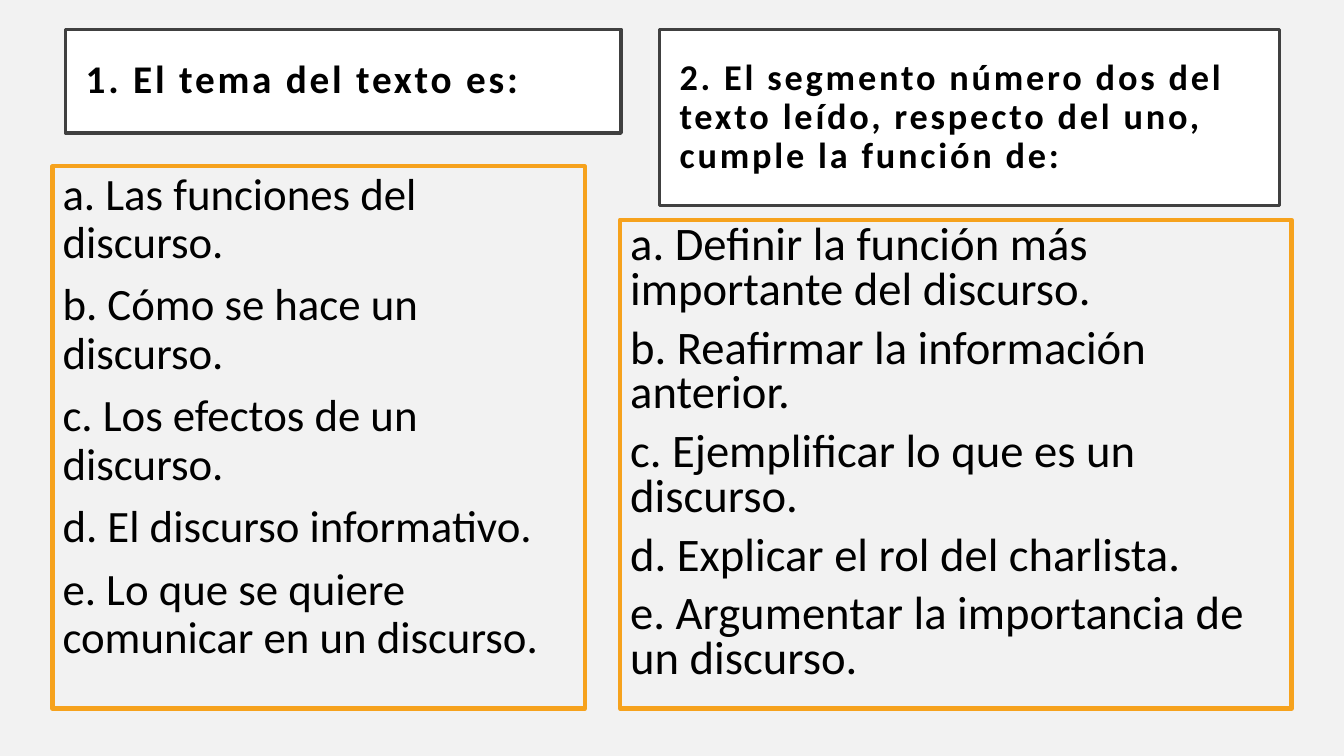
from lxml import etree
from pptx import Presentation
from pptx.dml.color import RGBColor
from pptx.enum.text import MSO_ANCHOR, MSO_AUTO_SIZE, PP_ALIGN
from pptx.oxml.ns import qn
from pptx.util import Inches, Pt

COLORS = {
    "background": "F2F2F2",
    "heading_fill": "FFFFFF",
    "heading_line": "404040",
    "answers_line": "F6A21D",
    "text": "000000",
}
FONT = "Calibri"
TWO_CONTENT_LAYOUT = 3

TOPIC_QUESTION = "1. El tema del texto es:"
TOPIC_ANSWERS = [
    "a. Las funciones del discurso.",
    "b. Cómo se hace un discurso.",
    "c. Los efectos de un discurso.",
    "d. El discurso informativo.",
    "e. Lo que se quiere comunicar en un discurso.",
]
FUNCTION_QUESTION = (
    "2. El segmento número dos del texto leído, respecto del uno, "
    "cumple la función de:"
)
FUNCTION_ANSWERS = [
    "a. Definir la función más importante del discurso.",
    "b. Reafirmar la información anterior.",
    "c. Ejemplificar lo que es un discurso.",
    "d. Explicar el rol del charlista.",
    "e. Argumentar la importancia de un discurso.",
]


def color(name):
    return RGBColor.from_string(COLORS[name])


def place(shape, left, top, width, height):
    shape.left, shape.top = Inches(left), Inches(top)
    shape.width, shape.height = Inches(width), Inches(height)


def outline(shape, color_name, width):
    shape.line.color.rgb = color(color_name)
    shape.line.width = Pt(width)


def add_text(paragraph, text, size, line_spacing, space_before=0):
    """Add one left-aligned run to the paragraph and return it."""
    paragraph.alignment = PP_ALIGN.LEFT
    paragraph.line_spacing = line_spacing
    paragraph.space_before = Pt(space_before)
    run = paragraph.add_run()
    run.text = text
    run.font.name = FONT
    run.font.size = Pt(size)
    run.font.color.rgb = color("text")
    return run


def remove_bullet(paragraph):
    properties = paragraph._p.get_or_add_pPr()
    properties.set("marL", "0")
    properties.set("indent", "0")
    etree.SubElement(properties, qn("a:buNone"))


def format_heading(shape, text, size):
    shape.fill.solid()
    shape.fill.fore_color.rgb = color("heading_fill")
    outline(shape, "heading_line", 2.5)
    frame = shape.text_frame
    frame.word_wrap = True
    frame.auto_size = MSO_AUTO_SIZE.NONE
    frame.vertical_anchor = MSO_ANCHOR.MIDDLE
    frame.margin_left = frame.margin_right = Inches(0.2)
    frame.margin_top = frame.margin_bottom = Inches(0.2)
    run = add_text(frame.paragraphs[0], text, size, 0.9)
    run.font.bold = True
    run._r.get_or_add_rPr().set("spc", "200")


def format_answers(shape, answers, size, line_spacing):
    outline(shape, "answers_line", 3)
    frame = shape.text_frame
    frame.auto_size = MSO_AUTO_SIZE.NONE
    for index, answer in enumerate(answers):
        paragraph = frame.add_paragraph() if index else frame.paragraphs[0]
        add_text(paragraph, answer, size, line_spacing, space_before=10)
        remove_bullet(paragraph)


def remove_empty_placeholders(slide):
    for placeholder in list(slide.placeholders):
        if not placeholder.text_frame.text:
            placeholder._element.getparent().remove(placeholder._element)


def main():
    presentation = Presentation()
    presentation.slide_width = Inches(13.33)
    presentation.slide_height = Inches(7.5)
    layout = presentation.slide_layouts[TWO_CONTENT_LAYOUT]
    slide = presentation.slides.add_slide(layout)
    slide.background.fill.solid()
    slide.background.fill.fore_color.rgb = color("background")

    topic_heading = slide.shapes.title
    place(topic_heading, 0.65, 0.29, 5.51, 1.03)
    format_heading(topic_heading, TOPIC_QUESTION, 28)

    topic_answers = slide.placeholders[1]
    place(topic_answers, 0.52, 1.65, 5.28, 5.38)
    format_answers(topic_answers, TOPIC_ANSWERS, 32, 0.9)

    function_heading = slide.shapes.add_textbox(
        Inches(6.54), Inches(0.29), Inches(6.15), Inches(1.75)
    )
    format_heading(function_heading, FUNCTION_QUESTION, 25.9)

    function_answers = slide.placeholders[2]
    place(function_answers, 6.15, 2.18, 6.66, 4.85)
    format_answers(function_answers, FUNCTION_ANSWERS, 33.3, 0.8)

    remove_empty_placeholders(slide)
    presentation.save("out.pptx")


if __name__ == "__main__":
    main()
